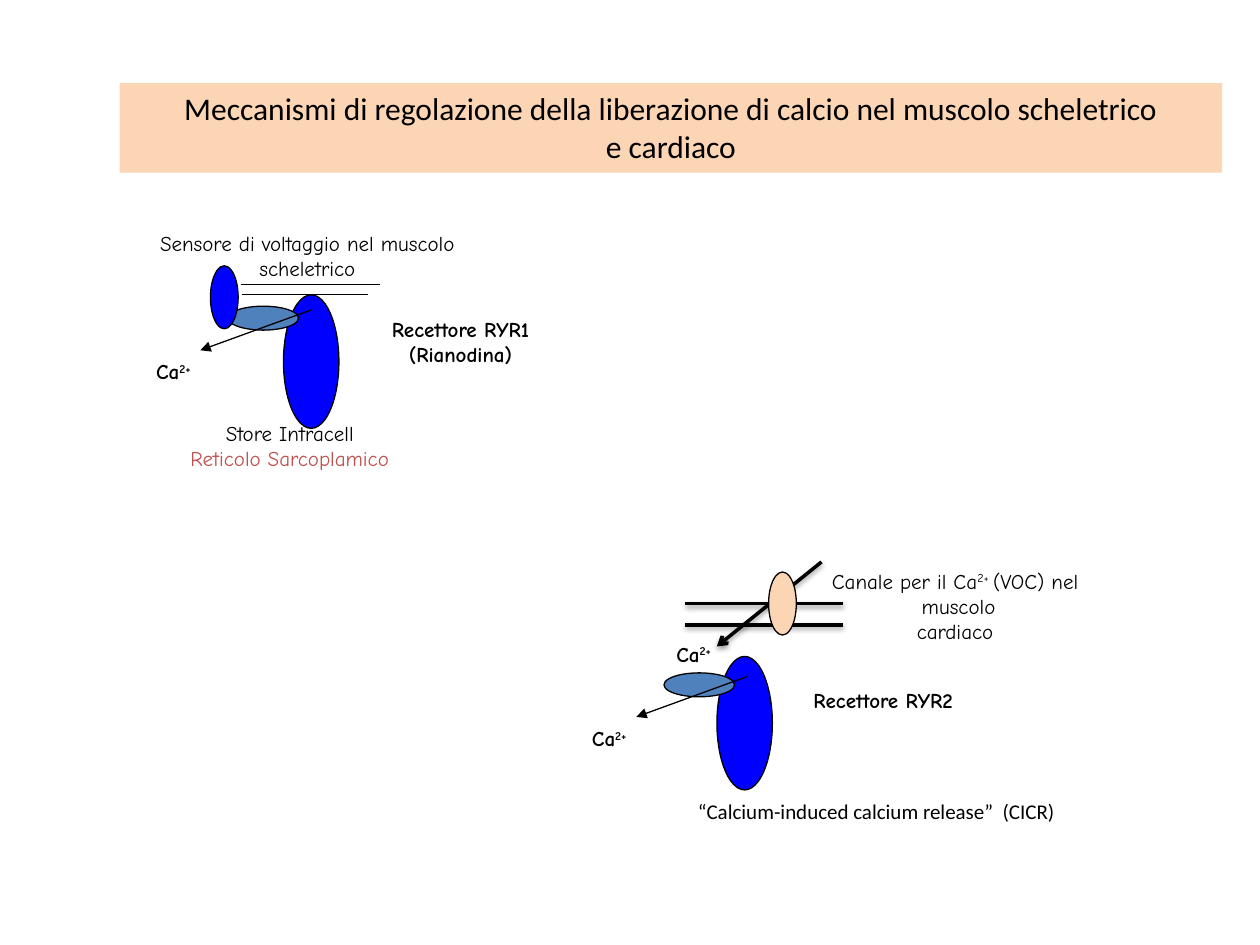
from pptx import Presentation
from pptx.dml.color import RGBColor
from pptx.enum.shapes import MSO_CONNECTOR, MSO_SHAPE
from pptx.enum.text import MSO_AUTO_SIZE, PP_ALIGN
from pptx.oxml import parse_xml
from pptx.oxml.ns import nsdecls
from pptx.util import Inches, Pt

LINE, OVAL = MSO_CONNECTOR.STRAIGHT, MSO_SHAPE.OVAL
LEFT, CENTER = PP_ALIGN.LEFT, PP_ALIGN.CENTER
FIT = MSO_AUTO_SIZE.SHAPE_TO_FIT_TEXT
BLACK, BLUE, STEEL, PEACH, RED = "000000", "0000FF", "4F81BD", "FCD5B5", "C0504D"
COLS, ROWS = 100, 75  # grid over the 10 x 7.5 inch slide
SHADOW = ('<a:outerShdw blurRad="39370" dist="20320" dir="5400000" rotWithShape="0">'
          '<a:srgbClr val="000000"><a:alpha val="38000"/></a:srgbClr></a:outerShdw>')


def rgb(color):
    return RGBColor.from_string(color)


def write(p, text, size=12, font="Comic Neue", color=BLACK, bold=False, align=CENTER):
    """Fill a paragraph; parts between ^ marks are superscript."""
    p.alignment = align
    for i, part in enumerate(text.split("^")):
        if not part:
            continue
        r = p.add_run()
        r.text = part
        r.font.size, r.font.name, r.font.bold = Pt(size), font, bold
        r.font.color.rgb = rgb(color)
        if i % 2:
            r._r.get_or_add_rPr().set("baseline", "30000")


class Diagram:
    """Draws on one slide; all lengths are grid columns and rows."""

    def __init__(self, prs):
        self.s = prs.slides.add_slide(prs.slide_layouts[6])
        self.col = prs.slide_width / COLS
        self.row = prs.slide_height / ROWS

    def place(self, x, y):
        return round(x * self.col), round(y * self.row)

    def text(self, x, y, w, h, *lines, fill=None, colors=(), **fmt):
        sp = self.s.shapes.add_textbox(*self.place(x, y), *self.place(w, h))
        if fill:
            sp.fill.solid()
            sp.fill.fore_color.rgb = rgb(fill)
        tf = sp.text_frame
        tf.word_wrap, tf.auto_size = False, FIT
        for i, line in enumerate(lines):
            p = tf.add_paragraph() if i else tf.paragraphs[0]
            write(p, line, color=colors[i] if colors else BLACK, **fmt)

    def oval(self, x, y, w, h, fill):
        sp = self.s.shapes.add_shape(OVAL, *self.place(x, y), *self.place(w, h))
        sp.shadow.inherit = False
        sp.fill.solid()
        sp.fill.fore_color.rgb = rgb(fill)
        sp.line.color.rgb, sp.line.width = rgb(BLACK), Pt(0.75)

    def line(self, x1, y1, x2, y2, width=0.75, head=None, shadow=""):
        c = self.s.shapes.add_connector(LINE, *self.place(x1, y1), *self.place(x2, y2))
        c.line.color.rgb, c.line.width = rgb(BLACK), Pt(width)
        if head:
            c.line._get_or_add_ln().append(
                parse_xml(f'<a:tailEnd {nsdecls("a")} type="{head}"/>'))
        c._element.spPr.append(
            parse_xml(f'<a:effectLst {nsdecls("a")}>{shadow}</a:effectLst>'))

    def receptor(self, x, y):
        self.oval(x, y, 4.4, 10.6, BLUE)

    def channel(self, x, y, fill):
        self.oval(x, y, 2.2, 5, fill)

    def calcium(self, x, y):
        self.text(x, y, 5.3, 3, "Ca^2+^", bold=True, align=LEFT)

    def release(self, x, y):
        """Receptor foot at x, y with the calcium leaving to the left."""
        self.oval(x, y, 5.6, 1.9, STEEL)
        self.line(x + 6.6, y + 0.3, x - 2.2, y + 3.5, head="triangle")
        self.calcium(x - 6.7, y + 3.7)


def main():
    prs = Presentation()
    prs.slide_width, prs.slide_height = Inches(10), Inches(7.5)
    d = Diagram(prs)

    # Skeletal muscle: voltage sensor coupled to RYR1
    d.line(19.1, 22.6, 30.2, 22.6)
    d.receptor(22.5, 23.4)
    d.text(13.5, 32.9, 19, 5, "Store Intracell", "Reticolo Sarcoplamico",
           colors=(BLACK, RED))
    d.release(18.1, 24.3)
    d.text(29.1, 24.6, 14.9, 5, "Recettore RYR1", "(Rianodina)", bold=True)
    d.channel(16.7, 21.1, BLUE)
    d.line(19.2, 23.4, 29.2, 23.4)
    d.text(10.9, 17.8, 27, 5, "Sensore di voltaggio nel muscolo", "scheletrico")

    # Cardiac muscle: calcium channel activating RYR2
    d.receptor(56.9, 52.1)
    d.text(62.6, 54.1, 15, 3, "Recettore RYR2", bold=True)
    for y in (47.9, 49.6):
        d.line(54.4, y, 66.9, y, width=2, shadow=SHADOW)
    d.release(52.7, 53.4)
    d.text(63.9, 44.6, 23.8, 7.1,
           "Canale per il Ca^2+ ^(VOC) nel", " muscolo", "cardiaco")
    d.line(65.2, 44.6, 56.9, 51.3, width=2, head="arrow", shadow=SHADOW)
    d.channel(61, 45.4, PEACH)
    d.calcium(52.7, 50.4)
    d.text(54.4, 62.9, 30.7, 3, "“Calcium-induced calcium release”  (CICR)",
           font="Calibri", align=LEFT)

    # Title band
    d.text(9.5, 6.6, 87.5, 7.1,
           "Meccanismi di regolazione della liberazione di calcio nel muscolo scheletrico",
           "e cardiaco", size=18, font="Calibri", fill=PEACH)

    prs.save("out.pptx")


if __name__ == "__main__":
    main()
